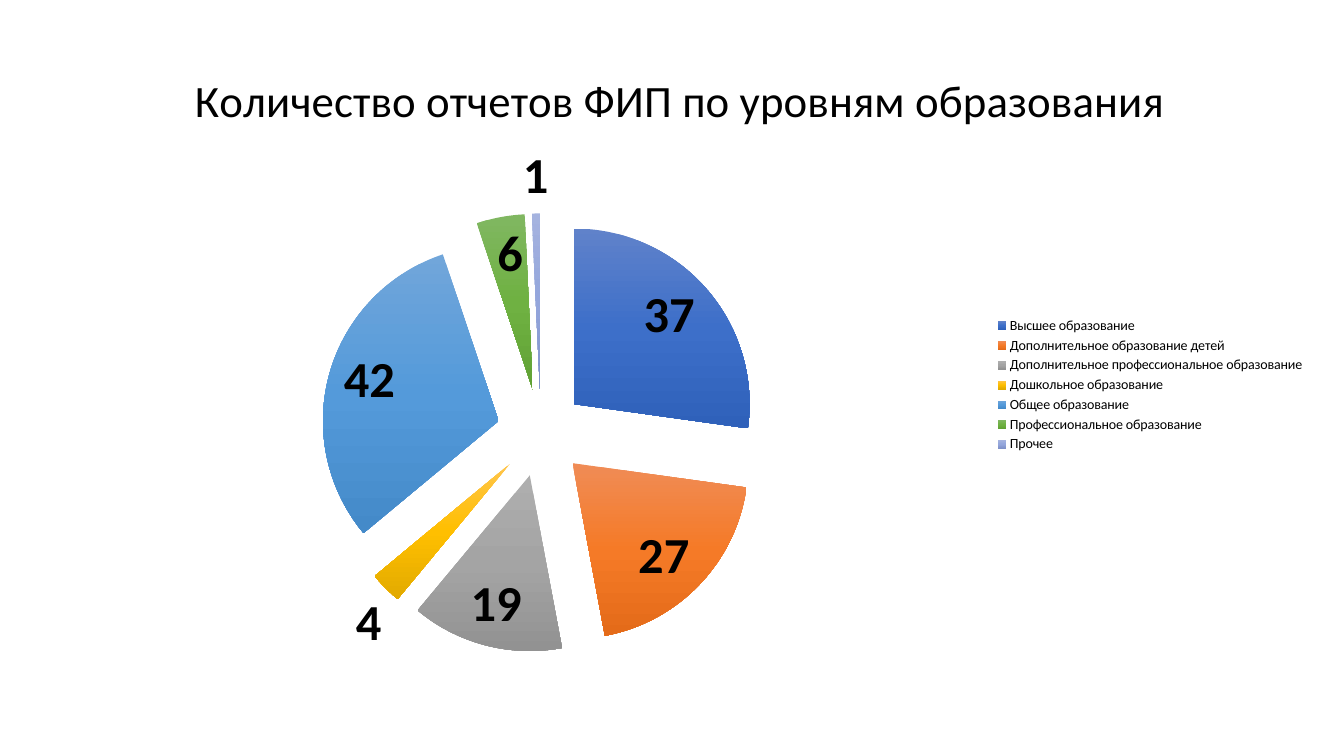
from copy import deepcopy

from pptx import Presentation
from pptx.chart.data import CategoryChartData
from pptx.dml.color import RGBColor
from pptx.enum.chart import XL_CHART_TYPE as Kind
from pptx.enum.chart import XL_LABEL_POSITION as Spot
from pptx.enum.chart import XL_LEGEND_POSITION as Side
from pptx.oxml import parse_xml
from pptx.oxml.ns import nsdecls, qn
from pptx.util import Emu, Pt
from lxml.etree import SubElement

BLACK = RGBColor(0x00, 0x00, 0x00)
BLUE = RGBColor(0x44, 0x72, 0xC4)
ORANGE = RGBColor(0xED, 0x7D, 0x31)
GREY = RGBColor(0xA5, 0xA5, 0xA5)
GOLD = RGBColor(0xFF, 0xC0, 0x00)
SKY = RGBColor(0x5B, 0x9B, 0xD5)
GREEN = RGBColor(0x70, 0xAD, 0x47)
LILAC = RGBColor(0x98, 0xA9, 0xDA)

LEVELS = [
    ("Высшее образование", 37, BLUE),
    ("Дополнительное образование детей", 27, ORANGE),
    ("Дополнительное профессиональное образование", 19, GREY),
    ("Дошкольное образование", 4, GOLD),
    ("Общее образование", 42, SKY),
    ("Профессиональное образование", 6, GREEN),
    ("Прочее", 1, LILAC),
]
# Position of each gradient stop and its colour changes, in percent
SHADES = [
    (0, {"satMod": 103, "lumMod": 102, "tint": 94}),
    (0.5, {"satMod": 110, "lumMod": 100, "shade": 100}),
    (1, {"lumMod": 99, "satMod": 120, "shade": 78}),
]


def px(n):
    return Emu(round(n * 914400 / 100.8))


def style(font, size, bold):
    looks = {"name": "Calibri", "size": Pt(size), "bold": bold}
    for key, value in looks.items():
        setattr(font, key, value)
    font.color.rgb = BLACK


deck = Presentation()
deck.slide_width, deck.slide_height = px(1344), px(756)
slide = deck.slides.add_slide(deck.slide_layouts[6])

data = CategoryChartData()
data.categories = [name for name, _, _ in LEVELS]
data.add_series("Series 1", [count for _, count, _ in LEVELS])
frame = slide.shapes.add_chart(Kind.PIE, px(46), px(42), px(1269), px(686), data)
chart = frame.chart
style(chart.font, 10, False)

# Title and legend
chart.has_title = True
title = chart.chart_title
title.include_in_layout = False
title.text_frame.text = "Количество отчетов ФИП по уровням образования"
style(title.text_frame.paragraphs[0].runs[0].font, 32, False)
chart.has_legend = True
chart.legend.position = Side.RIGHT
chart.legend.include_in_layout = False
style(chart.legend.font, 10, False)

# Plot area
area = chart.plots[0]._element.getparent()
for old in area.findall(qn("c:layout")):
    area.remove(old)
layout = parse_xml(f"<c:layout {nsdecls('c')}><c:manualLayout/></c:layout>")
place = {"layoutTarget": "inner", "xMode": "edge", "yMode": "edge",
         "x": 0.08, "y": 0.25, "w": 0.62, "h": 0.64}
for tag, value in place.items():
    SubElement(layout[0], qn(f"c:{tag}")).set("val", str(value))
area.insert(0, layout)

# Slices
plot = chart.plots[0]
plot.vary_by_categories = True
pie = plot.series[0]
burst = parse_xml(f'<c:explosion {nsdecls("c")} val="25"/>')
pie._element.find(qn("c:tx")).addnext(burst)
for i, (_, _, color) in enumerate(LEVELS):
    look = pie.points[i].format
    look.line.fill.background()
    fill = look.fill
    fill.gradient()
    fill.gradient_angle = 270
    first = fill.gradient_stops[0]._gs
    first.addnext(deepcopy(first))
    for stop, (spot, mods) in zip(fill.gradient_stops, SHADES):
        stop.position = spot
        stop.color.rgb = color
        for tag, value in mods.items():
            SubElement(stop._gs[0], qn(f"a:{tag}")).set("val", str(value * 1000))

# Values on the slices
plot.has_data_labels = True
labels = plot.data_labels
labels.show_value = True
labels.show_percentage = False
labels.position = Spot.BEST_FIT
style(labels.font, 36, True)

deck.save("out.pptx")
